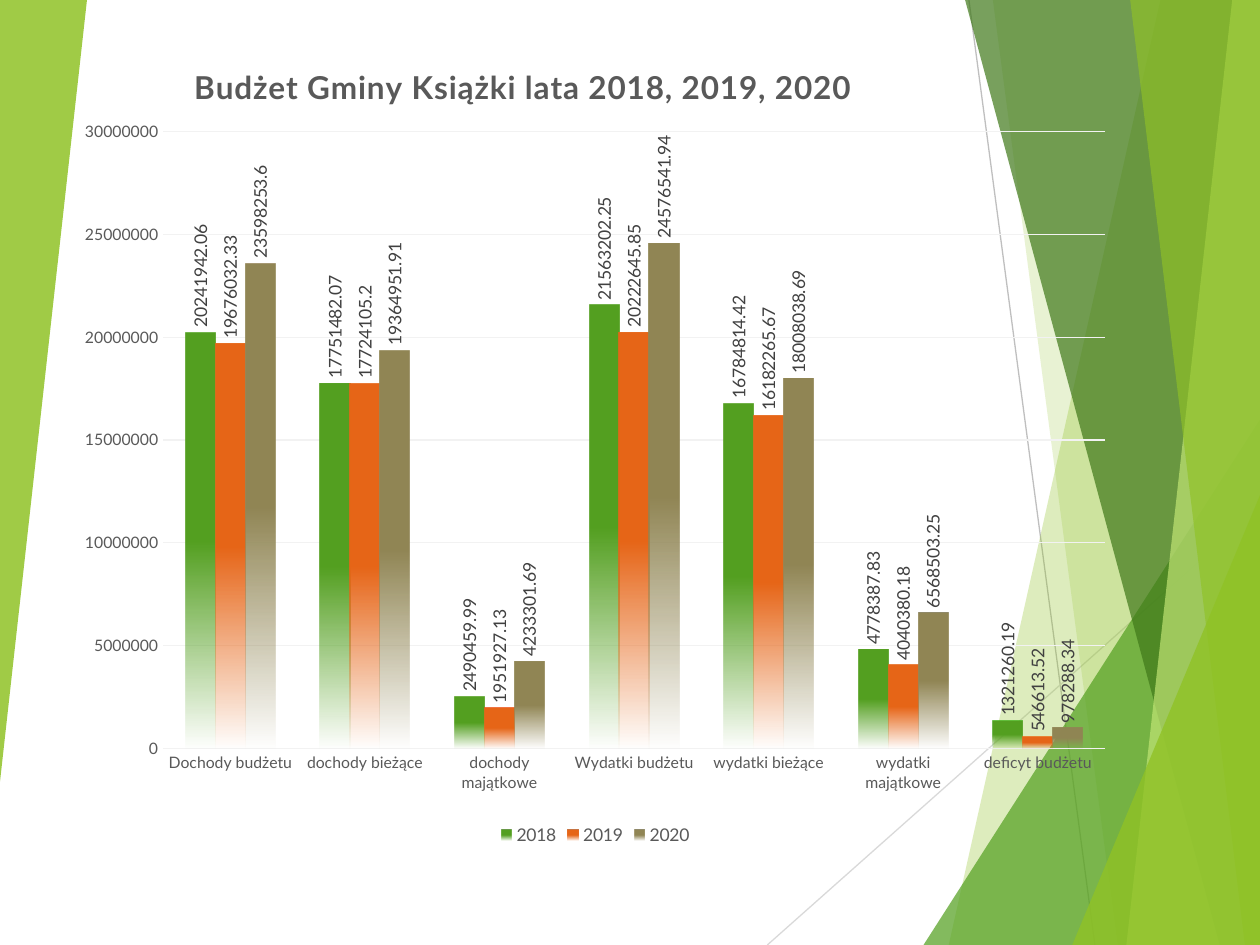
from collections import namedtuple
from lxml import etree
from pptx import Presentation
from pptx.chart.data import CategoryChartData
from pptx.dml.color import RGBColor
from pptx.enum.chart import XL_CHART_TYPE, XL_LABEL_POSITION, XL_LEGEND_POSITION, XL_TICK_MARK
from pptx.enum.shapes import MSO_CONNECTOR, MSO_SHAPE
from pptx.oxml import parse_xml
from pptx.oxml.ns import nsdecls, qn
from pptx.util import Inches, Pt

FONT = "Lato"
COLORS = {
    "lime": "90C226", "green": "54A021", "dark": "3F7819", "pale": "C0E474",
    "orange": "E76618", "olive": "918655", "grid": "F2F2F2", "axis": "595959",
    "label": "404040", "line": "BFBFBF", "light_line": "D9D9D9", "black": "000000",
}
TITLE = "Budżet Gminy Książki lata 2018, 2019, 2020"
CATEGORIES = ["Dochody budżetu", "dochody bieżące", "dochody majątkowe", "Wydatki budżetu",
              "wydatki bieżące", "wydatki majątkowe", "deficyt budżetu"]
SERIES = [
    ("2018", "green", [20241942.06, 17751482.07, 2490459.99, 21563202.25,
                       16784814.42, 4778387.83, 1321260.19]),
    ("2019", "orange", [19676032.33, 17724105.2, 1951927.13, 20222645.85,
                        16182265.67, 4040380.18, 546613.52]),
    ("2020", "olive", [23598253.6, 19364951.91, 4233301.69, 24576541.94,
                       18008038.69, 6568503.25, 978288.34]),
]


class Box(namedtuple("Box", "left top width height")):
    """A region whose contents are placed in percent of its size."""

    def x(self, pct):
        return int(self.left + self.width * pct / 100)

    def y(self, pct):
        return int(self.top + self.height * pct / 100)

    def area(self, x, y, w, h):
        return Box(self.x(x), self.y(y), int(self.width * w / 100), int(self.height * h / 100))


def rgb(name):
    return RGBColor.from_string(COLORS[name])


def set_font(font, size, color, bold=False):
    font.name, font.size, font.bold = FONT, Pt(size), bold
    font.color.rgb = rgb(color)


def paint(sp, color, opacity):
    sp.shadow.inherit = False
    sp.line.fill.background()
    sp.fill.solid()
    sp.fill.fore_color.rgb = rgb(color)
    clr = sp._element.spPr.find(qn("a:solidFill"))[0]
    etree.SubElement(clr, qn("a:alpha")).set("val", str(opacity * 1000))


def add_line(s, box, start, end, color):
    ln = s.shapes.add_connector(MSO_CONNECTOR.STRAIGHT, box.x(start[0]), box.y(start[1]),
                                box.x(end[0]), box.y(end[1]))
    ln.line.color.rgb = rgb(color)
    ln.line.width = Pt(0.75)
    etree.SubElement(ln._element.spPr, qn("a:effectLst"))


def add_facet(s, box, top_x, bottom_x, color, opacity):
    """Full-height panel from a slanted left edge to the right edge of the box."""
    fb = s.shapes.build_freeform(box.x(top_x), box.y(0))
    fb.add_line_segments([(box.x(100), box.y(0)), (box.x(100), box.y(100)),
                          (box.x(bottom_x), box.y(100))])
    paint(fb.convert_to_shape(), color, opacity)


def add_triangle(s, box, color, opacity, rotation=0):
    sp = s.shapes.add_shape(MSO_SHAPE.ISOSCELES_TRIANGLE, *box)
    sp.adjustments[0] = 1
    sp.rotation = rotation
    paint(sp, color, opacity)


def add_backdrop(s, box):
    # Thin lines
    add_line(s, box, (76.9, 0), (86.9, 100), "line")
    add_line(s, box, (100, 53.7), (60.9, 100), "light_line")
    # Right-hand facets, back to front
    add_facet(s, box, 92.1, 75.3, "lime", 30)
    add_facet(s, box, 78.8, 88.7, "lime", 20)
    add_triangle(s, box.area(73.3, 44.4, 26.7, 55.6), "green", 72)
    add_facet(s, box, 76.6, 96.8, "dark", 70)
    add_facet(s, box, 97.8, 89.4, "pale", 70)
    add_facet(s, box, 89.7, 98.8, "lime", 65)
    add_triangle(s, box.area(85.1, 52.4, 14.9, 47.6), "lime", 80)
    # Left wedge
    add_triangle(s, box.area(0, 0, 6.9, 82.7), "lime", 85, rotation=180)


def manual_layout(x, y, w=None, h=None):
    """Layout in percent of the chart; without a size only the position is set."""
    values = [("xMode", "edge"), ("yMode", "edge"), ("x", x / 100), ("y", y / 100)]
    if w is not None:
        values = [("layoutTarget", "inner")] + values + [("w", w / 100), ("h", h / 100)]
    body = "".join(f'<c:{tag} val="{val}"/>' for tag, val in values)
    return parse_xml(f'<c:layout {nsdecls("c")}><c:manualLayout>{body}</c:manualLayout></c:layout>')


def set_layout(parent, layout, before):
    for old in parent.findall(qn("c:layout")):
        parent.remove(old)
    parent.find(qn(before)).addprevious(layout)


def fade_fill(color):
    c = COLORS[color]
    return parse_xml(
        f'<a:gradFill {nsdecls("a")} rotWithShape="1"><a:gsLst>'
        f'<a:gs pos="50000"><a:srgbClr val="{c}"/></a:gs>'
        f'<a:gs pos="100000"><a:srgbClr val="{c}"><a:alpha val="0"/></a:srgbClr></a:gs>'
        f'</a:gsLst><a:lin ang="5400000" scaled="0"/></a:gradFill>')


def style_axis(axis):
    axis.major_tick_mark = axis.minor_tick_mark = XL_TICK_MARK.NONE
    axis.format.line.fill.background()
    set_font(axis.tick_labels.font, 9, "axis")


def style_series(ser, color):
    ser.format.line.fill.background()
    ser.invert_if_negative = False
    ser._element.find(qn("c:spPr")).insert(0, fade_fill(color))
    labels = ser.data_labels
    labels.show_value = True
    labels.position = XL_LABEL_POSITION.OUTSIDE_END
    set_font(labels.font, 10, "label")
    body = labels._element.find(qn("c:txPr")).find(qn("a:bodyPr"))
    body.set("rot", "-5400000")
    body.set("vert", "horz")


def add_budget_chart(s, box):
    data = CategoryChartData(number_format="General")
    data.categories = CATEGORIES
    for name, _, values in SERIES:
        data.add_series(name, values)
    chart = s.shapes.add_chart(XL_CHART_TYPE.COLUMN_CLUSTERED, *box, data).chart
    set_font(chart.font, 10, "black")

    # Title
    tf = chart.chart_title.text_frame
    tf.text = TITLE
    r = tf.paragraphs[0].runs[0]
    set_font(r.font, 18, "axis", bold=True)
    r.font._element.set("spc", "50")
    title = chart.chart_title._element
    for old in title.findall(qn("c:layout")):
        title.remove(old)
    title.find(qn("c:tx")).addnext(manual_layout(11.7, 3.9))

    # Plot and axes
    plot = chart.plots[0]
    plot.gap_width, plot.overlap, plot.vary_by_categories = 150, 0, False
    set_layout(plot._element.getparent(), manual_layout(9.3, 12.8, 88.7, 74.8), "c:barChart")
    style_axis(chart.category_axis)
    axis = chart.value_axis
    style_axis(axis)
    axis.minimum_scale, axis.maximum_scale, axis.major_unit = 0, 30000000, 5000000
    axis.major_gridlines.format.line.color.rgb = rgb("grid")
    axis.major_gridlines.format.line.width = Pt(0.75)
    for ser, (_, color, _) in zip(plot.series, SERIES):
        style_series(ser, color)

    # Legend
    chart.has_legend = True
    chart.legend.position = XL_LEGEND_POSITION.BOTTOM
    chart.legend.include_in_layout = False
    set_font(chart.legend.font, 10, "axis")


def main():
    prs = Presentation()
    prs.slide_width, prs.slide_height = Inches(10), Inches(7.5)
    s = prs.slides.add_slide(prs.slide_layouts[6])
    page = Box(0, 0, prs.slide_width, prs.slide_height)
    add_backdrop(s, page)
    add_budget_chart(s, page.area(5.1, 2.8, 84.3, 87.2))
    prs.save("out.pptx")


if __name__ == "__main__":
    main()
